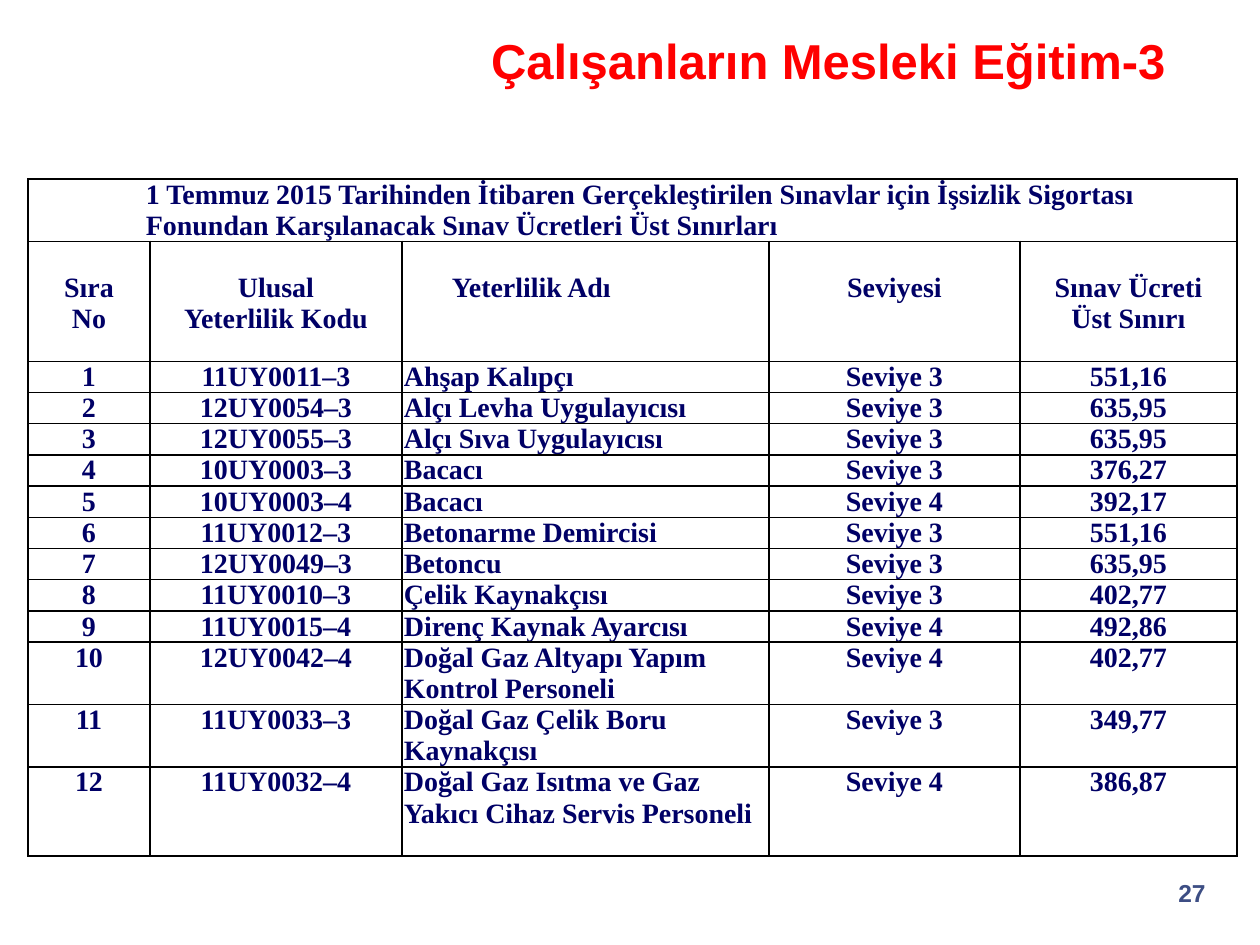
"""Build the slide listing exam fee limits for vocational qualifications."""
from dataclasses import dataclass

import pptx
import pptx.dml.color
import pptx.enum.text
import pptx.oxml
import pptx.oxml.ns
import pptx.util

EMU_PER_PIXEL = 914400 / 126
COLORS = {"title": "FF0000", "table": "000066", "number": "3D4E84", "border": "000000"}
ALIGN = pptx.enum.text.PP_ALIGN
ANCHOR = pptx.enum.text.MSO_ANCHOR


@dataclass(frozen=True)
class TextStyle:
    font: str
    size: int
    color: str


@dataclass(frozen=True)
class Label:
    text: str
    left: int
    top: int
    width: int
    height: int
    style: TextStyle
    align: ALIGN
    anchor: ANCHOR


@dataclass(frozen=True)
class CellLayout:
    align: ALIGN = ALIGN.CENTER
    left: int = 0
    right: int = 0
    top: int = 0


@dataclass(frozen=True)
class Qualification:
    code: str
    name: str
    level: int
    fee: str


TABLE_STYLE = TextStyle("Times New Roman", 16, COLORS["table"])
TABLE_LINE_SPACING = pptx.util.Pt(17.8)
LABELS = [
    Label("Çalışanların Mesleki Eğitim-3 ", 410, 25, 850, 70,
          TextStyle("Arial", 28, COLORS["title"]), ALIGN.CENTER, ANCHOR.MIDDLE),
    Label("27", 1146, 872, 72, 63,
          TextStyle("Arial", 14, COLORS["number"]), ALIGN.RIGHT, ANCHOR.TOP),
]
CAPTION = (
    "1 Temmuz 2015 Tarihinden İtibaren Gerçekleştirilen Sınavlar için İşsizlik Sigortası "
    "Fonundan Karşılanacak Sınav Ücretleri Üst Sınırları"
)
HEADERS = ["Sıra No", "Ulusal Yeterlilik Kodu", "Yeterlilik Adı", "Seviyesi",
           "Sınav Ücreti Üst Sınırı"]
QUALIFICATIONS = [
    Qualification("11UY0011–3", "Ahşap Kalıpçı", 3, "551,16"),
    Qualification("12UY0054–3", "Alçı Levha Uygulayıcısı", 3, "635,95"),
    Qualification("12UY0055–3", "Alçı Sıva Uygulayıcısı", 3, "635,95"),
    Qualification("10UY0003–3", "Bacacı", 3, "376,27"),
    Qualification("10UY0003–4", "Bacacı", 4, "392,17"),
    Qualification("11UY0012–3", "Betonarme Demircisi", 3, "551,16"),
    Qualification("12UY0049–3", "Betoncu", 3, "635,95"),
    Qualification("11UY0010–3", "Çelik Kaynakçısı", 3, "402,77"),
    Qualification("11UY0015–4", "Direnç Kaynak Ayarcısı", 4, "492,86"),
    Qualification("12UY0042–4", "Doğal Gaz Altyapı Yapım Kontrol Personeli", 4, "402,77"),
    Qualification("11UY0033–3", "Doğal Gaz Çelik Boru Kaynakçısı", 3, "349,77"),
    Qualification("11UY0032–4", "Doğal Gaz Isıtma ve Gaz Yakıcı Cihaz Servis Personeli", 4,
                  "386,87"),
]
TABLE_LEFT, TABLE_TOP = 28, 179
COLUMN_WIDTHS = [122, 252, 367, 251, 217]
ROW_HEIGHTS = [62, 120] + [31] * 9 + [62, 62, 89]
NAME_COLUMN = 2
CAPTION_LAYOUT = CellLayout(ALIGN.LEFT, left=118)
HEADER_LAYOUT = CellLayout(left=31, right=31, top=31)
NAME_HEADER_LAYOUT = CellLayout(ALIGN.LEFT, left=50, top=31)
NAME_LAYOUT = CellLayout(ALIGN.LEFT, left=2)


def px(value: int) -> pptx.util.Emu:
    """Convert pixels to EMU."""
    return pptx.util.Emu(round(value * EMU_PER_PIXEL))


def style_paragraph(paragraph, style: TextStyle, align: ALIGN) -> None:
    """Apply bold type and alignment to a paragraph."""
    paragraph.alignment = align
    paragraph.font.name = style.font
    paragraph.font.size = pptx.util.Pt(style.size)
    paragraph.font.bold = True
    paragraph.font.color.rgb = pptx.dml.color.RGBColor.from_string(style.color)


def add_label(slide, label: Label) -> None:
    """Add a single-paragraph text box."""
    shape = slide.shapes.add_textbox(
        px(label.left), px(label.top), px(label.width), px(label.height))
    shape.text_frame.word_wrap = True
    shape.text_frame.vertical_anchor = label.anchor
    paragraph = shape.text_frame.paragraphs[0]
    paragraph.text = label.text
    style_paragraph(paragraph, label.style, label.align)


def set_borders(cell) -> None:
    """Draw a thin line on all four sides of a cell."""
    properties = cell._tc.get_or_add_tcPr()
    for index, side in enumerate(("lnL", "lnR", "lnT", "lnB")):
        properties.insert(index, pptx.oxml.parse_xml(
            f'<a:{side} {pptx.oxml.ns.nsdecls("a")} w="12700"><a:solidFill>'
            f'<a:srgbClr val="{COLORS["border"]}"/></a:solidFill></a:{side}>'))


def fill_cell(cell, text: str, layout: CellLayout) -> None:
    """Write styled text into a cell with the given insets."""
    cell.margin_left, cell.margin_right = px(layout.left), px(layout.right)
    cell.margin_top, cell.margin_bottom = px(layout.top), 0
    paragraph = cell.text_frame.paragraphs[0]
    paragraph.text = text
    paragraph.line_spacing = TABLE_LINE_SPACING
    style_paragraph(paragraph, TABLE_STYLE, layout.align)


def add_fee_table(slide) -> None:
    """Add the table of qualifications and fee limits."""
    table = slide.shapes.add_table(
        len(ROW_HEIGHTS), len(COLUMN_WIDTHS), px(TABLE_LEFT), px(TABLE_TOP),
        px(sum(COLUMN_WIDTHS)), px(sum(ROW_HEIGHTS))).table
    table.first_row = table.horz_banding = False
    for column, width in zip(table.columns, COLUMN_WIDTHS):
        column.width = px(width)
    for row, height in zip(table.rows, ROW_HEIGHTS):
        row.height = px(height)
        for cell in row.cells:
            cell.fill.background()
            set_borders(cell)
    table.cell(0, 0).merge(table.cell(0, len(COLUMN_WIDTHS) - 1))
    fill_cell(table.cell(0, 0), CAPTION, CAPTION_LAYOUT)
    for column, header in enumerate(HEADERS):
        layout = NAME_HEADER_LAYOUT if column == NAME_COLUMN else HEADER_LAYOUT
        fill_cell(table.cell(1, column), header, layout)
    for number, item in enumerate(QUALIFICATIONS, start=1):
        values = [str(number), item.code, item.name, f"Seviye {item.level}", item.fee]
        for column, value in enumerate(values):
            layout = NAME_LAYOUT if column == NAME_COLUMN else CellLayout()
            fill_cell(table.cell(number + 1, column), value, layout)


def main() -> None:
    """Create and save the presentation."""
    presentation = pptx.Presentation()
    presentation.slide_width, presentation.slide_height = px(1260), px(945)
    slide = presentation.slides.add_slide(presentation.slide_layouts[6])
    for label in LABELS:
        add_label(slide, label)
    add_fee_table(slide)
    presentation.save("out.pptx")


if __name__ == "__main__":
    main()
